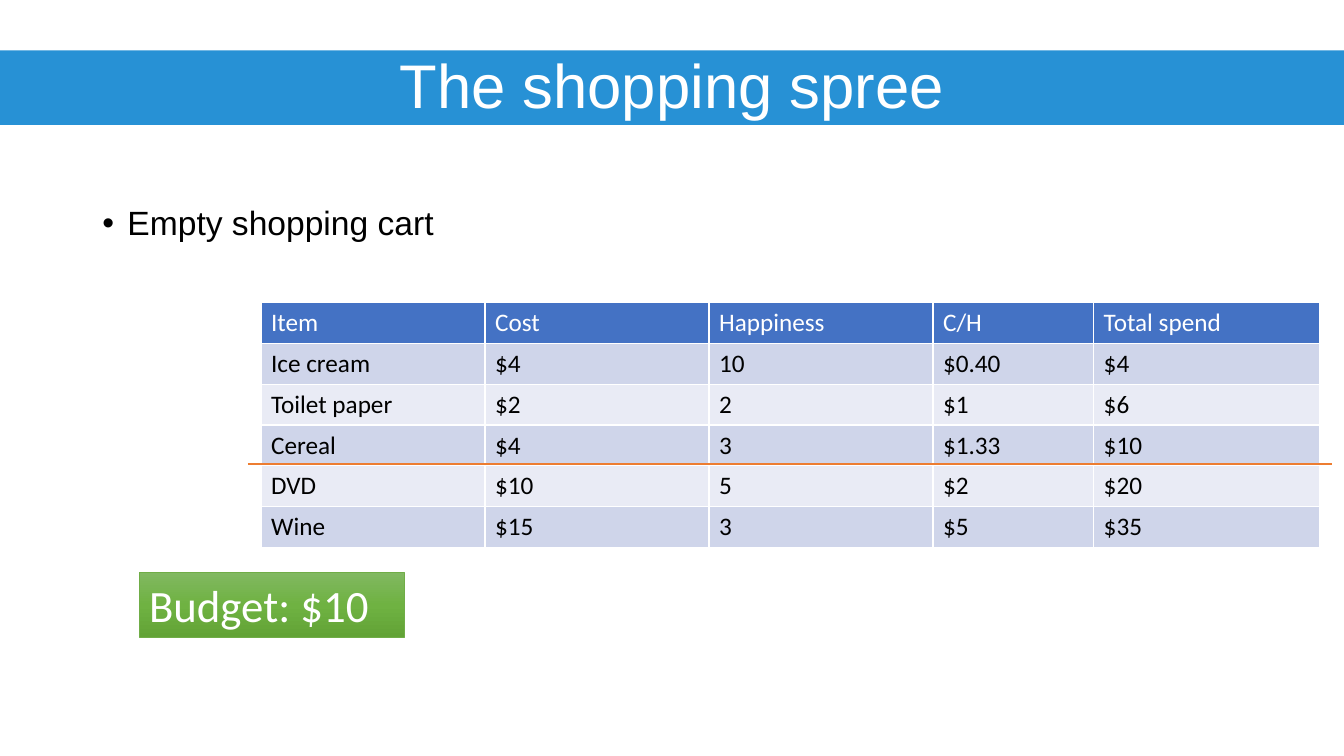
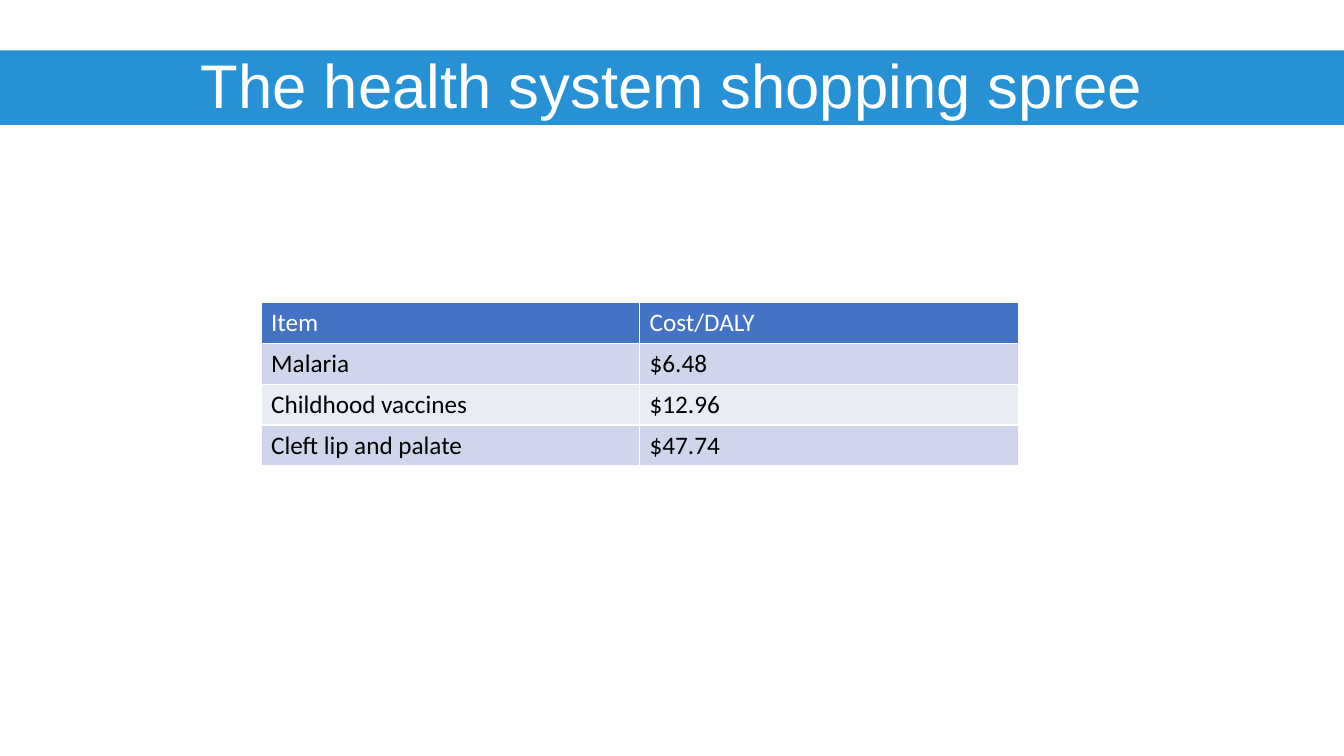
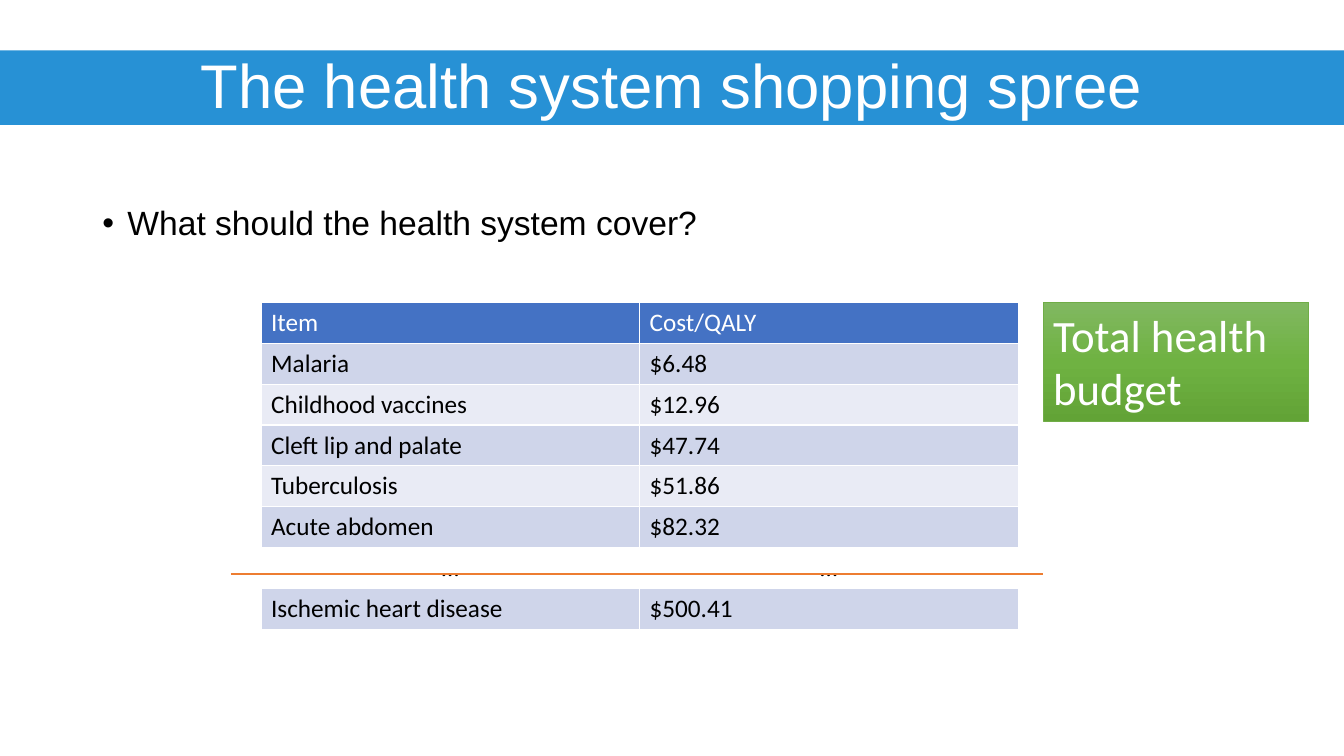
"""Build three slides that compare shopping lists with health spending."""
from copy import deepcopy

from lxml.etree import SubElement
from pptx import Presentation
from pptx.dml.color import RGBColor
from pptx.enum.shapes import MSO_CONNECTOR, MSO_SHAPE
from pptx.enum.text import MSO_ANCHOR, MSO_AUTO_SIZE, PP_ALIGN
from pptx.oxml.ns import qn
from pptx.util import Pt

COLORS = {
    "band": "2791D5", "white": "FFFFFF", "black": "000000",
    "header": "4472C4", "odd": "CFD5EA", "even": "E9EBF5",
    "cutoff": "ED7D31", "box_line": "70AD47",
    "box_top": "81B861", "box_mid": "6FB242", "box_bottom": "62A336",
}
RGB = {name: RGBColor.from_string(value) for name, value in COLORS.items()}
WIDTH, HEIGHT = 960, 540
TABLE_LEFT, TABLE_TOP, ROW_HEIGHT = 186.5, 216, 29.2
HEALTH_COLUMN = 270.4

health_items = [
    ["Malaria", "$6.48"],
    ["Childhood vaccines", "$12.96"],
    ["Cleft lip and palate", "$47.74"],
]
more_items = [
    ["Tuberculosis", "$51.86"],
    ["Acute abdomen", "$82.32"],
    ["…", "…"],
    ["Ischemic heart disease", "$500.41"],
]
shopping = [
    ["Item", "Cost", "Happiness", "C/H"],
    ["Ice cream", "$4", "10", "$0.40"],
    ["Toilet paper", "$2", "2", "$1"],
    ["Cereal", "$4", "3", "$1.33"],
    ["DVD", "$10", "5", "$2"],
    ["Wine", "$15", "3", "$5"],
]
total_spend = [["Total spend"], ["$4"], ["$6"], ["$10"], ["$20"], ["$35"]]

slides = [
    {
        "title": "The shopping spree",
        "bullet": "Empty shopping cart",
        "tables": [(TABLE_LEFT, 160, shopping), (781.2, 161.3, total_spend)],
        "cutoff": (177.1, 951.8, 331.2),
        "budget": ("Budget: $10", 99.4, 409, 46),
    },
    {
        "title": "The health system shopping spree",
        "tables": [(TABLE_LEFT, HEALTH_COLUMN,
                    [["Item", "Cost/DALY"]] + health_items)],
    },
    {
        "title": "The health system shopping spree",
        "bullet": "What should the health system cover?",
        "tables": [(TABLE_LEFT, HEALTH_COLUMN,
                    [["Item", "Cost/QALY"]] + health_items + more_items)],
        "cutoff": (164.9, 745.2, 409.7),
        "budget": ("Total health budget", 745.2, 216, 85),
    },
]


def add_run(p, text, size, font, color):
    r = p.add_run()
    r.text = text
    r.font.size = Pt(size)
    r.font.name = font
    r.font.bold = False
    r.font.color.rgb = RGB[color]


def add_table(s, left, column_width, rows):
    columns = len(rows[0])
    table = s.shapes.add_table(
        len(rows), columns, Pt(left), Pt(TABLE_TOP),
        Pt(column_width * columns), Pt(ROW_HEIGHT * len(rows))).table
    for column in table.columns:
        column.width = Pt(column_width)
    for i, row in enumerate(rows):
        table.rows[i].height = Pt(ROW_HEIGHT)
        fill = "header" if i == 0 else "odd" if i % 2 else "even"
        for j, text in enumerate(row):
            cell = table.cell(i, j)
            p = cell.text_frame.paragraphs[0]
            if text == "…":
                cell.fill.background()
                p.alignment = PP_ALIGN.CENTER
            else:
                cell.fill.solid()
                cell.fill.fore_color.rgb = RGB[fill]
            add_run(p, text, 18, "Calibri", "black" if i else "white")


prs = Presentation()
prs.slide_width, prs.slide_height = Pt(WIDTH), Pt(HEIGHT)
layout = prs.slide_layouts[5]

for number, content in enumerate(slides):
    s = prs.slides.add_slide(layout)
    if number == 0:
        band = s.shapes.add_shape(
            MSO_SHAPE.RECTANGLE, 0, Pt(36), Pt(WIDTH), Pt(53.3))
        band.shadow.inherit = False
        band.fill.solid()
        band.fill.fore_color.rgb = RGB["band"]
        band.line.fill.background()
        layout.shapes._spTree.insert(2, band._element)

    title = s.shapes.title
    title.left, title.top = Pt(66), Pt(28.8)
    title.width, title.height = Pt(828), Pt(69)
    tf = title.text_frame
    tf.word_wrap = True
    tf.auto_size = MSO_AUTO_SIZE.NONE
    tf.vertical_anchor = MSO_ANCHOR.MIDDLE
    p = tf.paragraphs[0]
    p.alignment = PP_ALIGN.CENTER
    p.line_spacing = 0.9
    add_run(p, content["title"], 44, "Arial", "white")

    if "bullet" in content:
        body = s.shapes.add_textbox(Pt(66), Pt(144), Pt(828), Pt(342.6))
        tf = body.text_frame
        tf.word_wrap = True
        p = tf.paragraphs[0]
        p.line_spacing = 0.9
        pPr = p._p.get_or_add_pPr()
        pPr.set("marL", str(Pt(18)))
        pPr.set("indent", str(-Pt(18)))
        SubElement(pPr, qn("a:buFont"), typeface="Arial")
        SubElement(pPr, qn("a:buChar"), char="•")
        add_run(p, content["bullet"], 24, "Arial", "black")

    for left, column_width, rows in content["tables"]:
        add_table(s, left, column_width, rows)

    if "cutoff" in content:
        start, end, y = content["cutoff"]
        cutoff = s.shapes.add_connector(
            MSO_CONNECTOR.STRAIGHT, Pt(start), Pt(y), Pt(end), Pt(y))
        cutoff.line.color.rgb = RGB["cutoff"]
        cutoff.line.width = Pt(1.5)
        SubElement(cutoff._element.spPr, qn("a:effectLst"))

    if "budget" in content:
        text, left, top, height = content["budget"]
        sp = s.shapes.add_shape(
            MSO_SHAPE.RECTANGLE, Pt(left), Pt(top), Pt(189.5), Pt(height))
        sp.shadow.inherit = False
        sp.line.color.rgb = RGB["box_line"]
        sp.line.width = Pt(0.5)
        sp.fill.gradient()
        sp.fill.gradient_angle = 270
        stops = sp._element.spPr.find(".//" + qn("a:gsLst"))
        stops.insert(1, deepcopy(stops[0]))
        names = ["box_top", "box_mid", "box_bottom"]
        for i, stop in enumerate(sp.fill.gradient_stops):
            stop.position = i / 2
            stop.color.rgb = RGB[names[i]]
        tf = sp.text_frame
        tf.word_wrap = True
        tf.auto_size = MSO_AUTO_SIZE.SHAPE_TO_FIT_TEXT
        tf.vertical_anchor = MSO_ANCHOR.TOP
        p = tf.paragraphs[0]
        p.alignment = PP_ALIGN.LEFT
        add_run(p, text, 32, "Calibri", "white")

prs.save("out.pptx")
